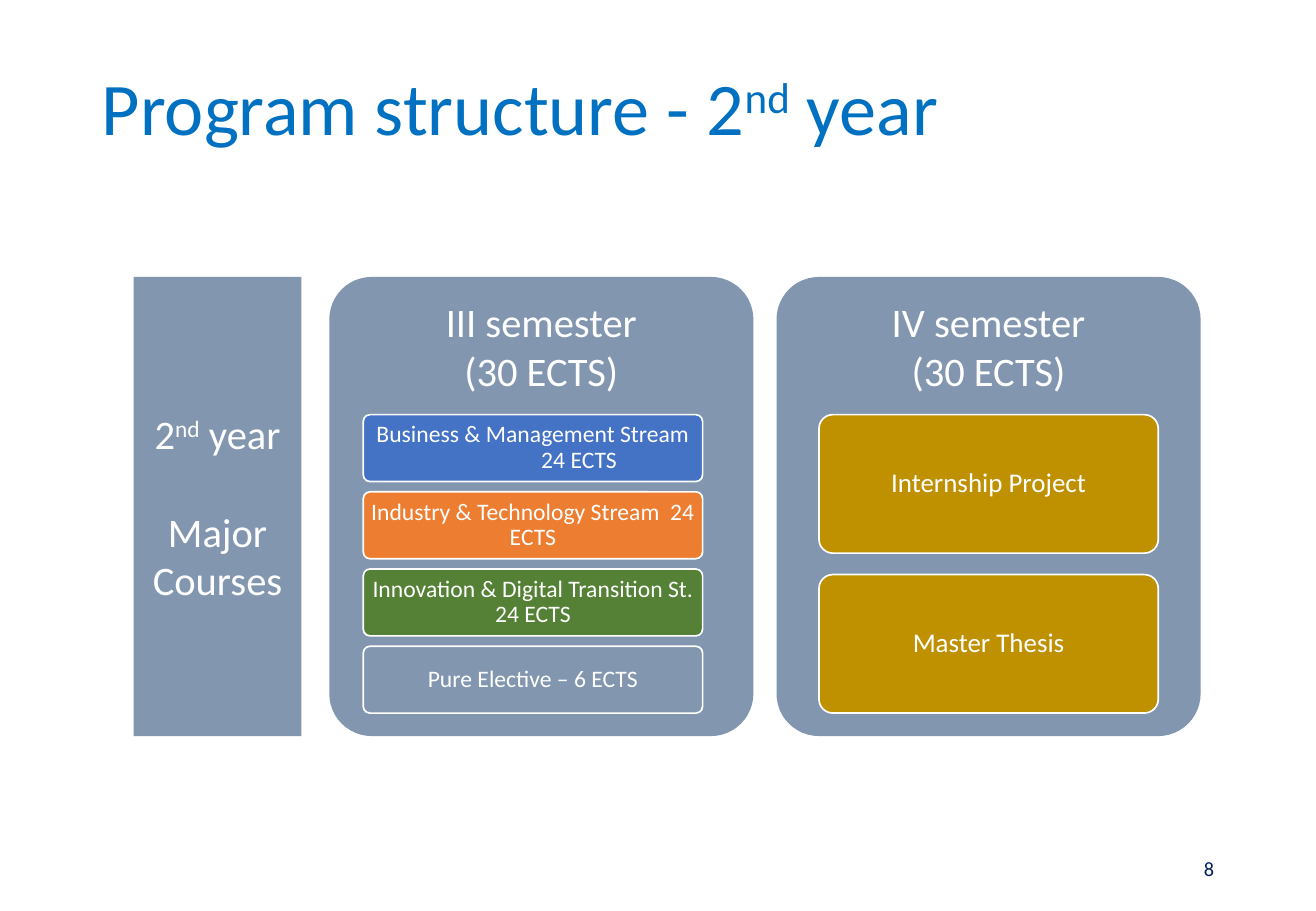
from dataclasses import dataclass

from pptx import Presentation
from pptx.dml.color import RGBColor
from pptx.enum.shapes import MSO_SHAPE
from pptx.enum.text import MSO_ANCHOR, PP_ALIGN
from pptx.util import Inches, Pt

RECT, ROUND = MSO_SHAPE.RECTANGLE, MSO_SHAPE.ROUNDED_RECTANGLE
MIDDLE = MSO_ANCHOR.MIDDLE
LEFT, CENTER, RIGHT = PP_ALIGN.LEFT, PP_ALIGN.CENTER, PP_ALIGN.RIGHT


@dataclass(frozen=True)
class Theme:
    font: str = "Calibri"
    title: str = "0070C0"
    number: str = "002060"
    white: str = "FFFFFF"
    panel: str = "8296B0"
    business: str = "4472C4"
    industry: str = "ED7D31"
    innovation: str = "548135"
    project: str = "BF9000"
    title_size: int = 44
    heading_size: int = 24
    project_size: int = 16
    course_size: int = 14
    number_size: int = 12


T = Theme()


def write(shape, paragraphs, size, color=T.white, align=CENTER, spacing=1.0, inset=(0.1, 0.05)):
    """Fill a shape with paragraphs; text between carets is superscript."""
    tf = shape.text_frame
    tf.word_wrap = True
    tf.vertical_anchor = MIDDLE
    tf.margin_left = tf.margin_right = Inches(inset[0])
    tf.margin_top = tf.margin_bottom = Inches(inset[1])
    for i, text in enumerate(paragraphs):
        p = tf.add_paragraph() if i else tf.paragraphs[0]
        p.alignment = align
        p.line_spacing = spacing
        for j, part in enumerate(text.split("^")):
            r = p.add_run()
            r.text = part
            if j % 2:
                r._r.get_or_add_rPr().set("baseline", "30000")
        p.font.name = T.font
        p.font.size = Pt(size)
        p.font.color.rgb = RGBColor.from_string(color)
    return tf


def add_text(s, box, *args, **kwargs):
    return write(s.shapes.add_textbox(*map(Inches, box)), *args, **kwargs)


def add_block(s, kind, box, fill, line=None):
    sp = s.shapes.add_shape(kind, *map(Inches, box))
    sp.shadow.inherit = False
    sp.fill.solid()
    sp.fill.fore_color.rgb = RGBColor.from_string(fill)
    if kind == ROUND:
        sp.adjustments[0] = 0.1
    if line:
        sp.line.color.rgb = RGBColor.from_string(line)
        sp.line.width = Pt(1)
    else:
        sp.line.fill.background()
    return sp


def add_year(s, box):
    sp = add_block(s, RECT, box, T.panel)
    tf = write(sp, ["2^nd^ year", "Major Courses"], T.heading_size, inset=(0.1, 0.1))
    tf.paragraphs[1].space_before = Pt(29)


def add_semester(s, box, heading, cards, size, indent):
    """Draw a panel with a heading and equal cards; return the cards' text frames."""
    x, y, w, h = box
    add_block(s, ROUND, box, T.panel)
    heading_h = 0.3 * h
    add_text(s, (x, y, w, heading_h), heading, T.heading_size, inset=(0.1, 0.1))
    n, gap = len(cards), 0.155
    card_h = 0.65 * h / (n + gap * (n - 1))
    frames = []
    for i, (paragraphs, fill) in enumerate(cards):
        top = y + heading_h + i * card_h * (1 + gap)
        sp = add_block(s, ROUND, (x + indent, top, 0.8 * w, card_h), fill, T.white)
        frames.append(write(sp, paragraphs, size, spacing=0.9, inset=(0.03, 0.02)))
    return frames


def main():
    prs = Presentation()
    prs.slide_width, prs.slide_height = Inches(10.83), Inches(7.5)
    s = prs.slides.add_slide(prs.slide_layouts[6])

    add_text(s, (0.74, 0.4, 9.34, 1.04), ["Program structure - 2^nd^ year"],
             T.title_size, T.title, LEFT, 0.9)
    top, height, panel_w = 2.28, 3.78, 3.49
    add_year(s, (1.1, top, 1.38, height))
    courses = [
        (["Business & Management Stream", "24 ECTS"], T.business),
        (["Industry & Technology Stream  24 ECTS"], T.industry),
        (["Innovation & Digital Transition St. 24 ECTS"], T.innovation),
        (["Pure Elective – 6 ECTS"], T.panel),
    ]
    frames = add_semester(s, (2.71, top, panel_w, height), ["III semester", "(30 ECTS)"],
                          courses, T.course_size, 0.28)
    # The credits of the first stream sit right of centre
    credits = frames[0].paragraphs[1]
    credits._p.get_or_add_pPr().set("marL", str(Inches(0.76)))
    projects = [(["Internship Project"], T.project), (["Master Thesis"], T.project)]
    add_semester(s, (6.39, top, panel_w, height), ["IV semester", "(30 ECTS)"],
                 projects, T.project_size, 0.35)
    add_text(s, (7.65, 6.95, 2.44, 0.4), ["8"], T.number_size, T.number, RIGHT)
    prs.save("out.pptx")


if __name__ == "__main__":
    main()
